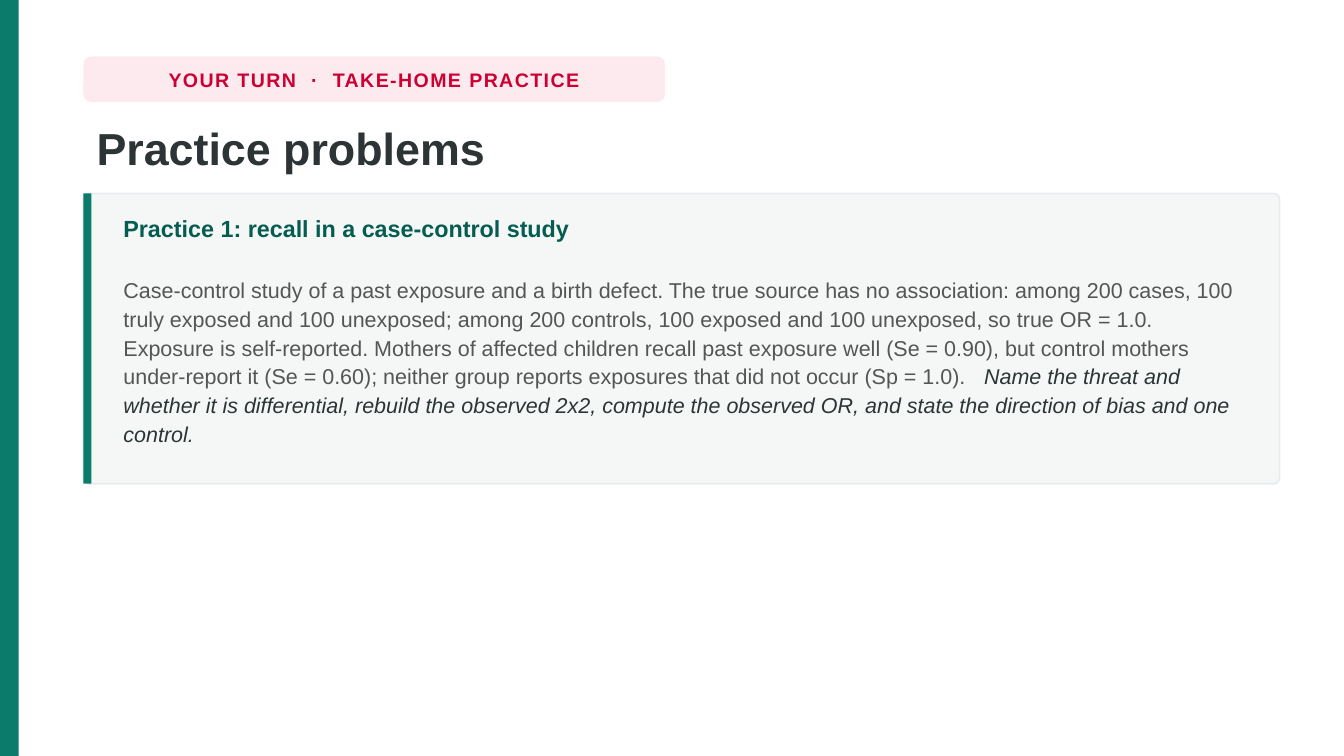
from pptx import Presentation
from pptx.dml.color import RGBColor
from pptx.enum.shapes import MSO_SHAPE as SHAPE
from pptx.enum.text import MSO_ANCHOR as ANCHOR, PP_ALIGN as ALIGN
from pptx.util import Pt

COLORS = {
    "green": "0B7B6B", "dark_green": "065C50", "red": "CC0033",
    "pink": "FDEAEF", "ink": "2D3436", "gray": "555555",
    "panel": "F4F7F6", "border": "E8ECEE",
}
LEFT, WIDTH = 44.64, 640.8
CARD_TOP, CARD_HEIGHT = 103.68, 155.52

prs = Presentation()
prs.slide_width, prs.slide_height = Pt(720), Pt(405)
slide = prs.slides.add_slide(prs.slide_layouts[6])


def add_panel(kind, box, fill, radius=None, border=None):
    panel = slide.shapes.add_shape(kind, *map(Pt, box))
    panel.shadow.inherit = False
    panel.fill.solid()
    panel.fill.fore_color.rgb = RGBColor.from_string(COLORS[fill])
    if radius is not None:
        panel.adjustments[0] = radius
    if border:
        panel.line.color.rgb = RGBColor.from_string(COLORS[border])
        panel.line.width = Pt(1)
    else:
        panel.line.fill.background()


def add_run(paragraph, text, size, color, bold=False, italic=False):
    run = paragraph.add_run()
    run.text = text
    run.font.name = "Arial"
    run.font.size = Pt(size)
    run.font.bold = bold
    run.font.italic = italic
    run.font.color.rgb = RGBColor.from_string(COLORS[color])
    return run


# Side band
add_panel(SHAPE.RECTANGLE, (0, 0, 10, 405), "green")

# Section tag
tag_box = (LEFT, 30.24, 311.76, 24.48)
add_panel(SHAPE.ROUNDED_RECTANGLE, tag_box, "pink", radius=0.18)
tag = slide.shapes.add_textbox(*map(Pt, tag_box)).text_frame
tag.word_wrap = False
tag.vertical_anchor = ANCHOR.MIDDLE
tag.paragraphs[0].alignment = ALIGN.CENTER
tag_run = add_run(tag.paragraphs[0], "YOUR TURN  ·  TAKE-HOME PRACTICE", 10.5, "red", bold=True)
tag_run.font._element.set("spc", "80")

# Title
title = slide.shapes.add_textbox(Pt(LEFT), Pt(60.48), Pt(WIDTH), Pt(40.32)).text_frame
title.word_wrap = True
title.paragraphs[0].line_spacing = 1.02
add_run(title.paragraphs[0], "Practice problems", 24, "ink", bold=True)

# Problem card with accent edge
add_panel(SHAPE.ROUNDED_RECTANGLE, (LEFT, CARD_TOP, WIDTH, CARD_HEIGHT), "panel",
          radius=0.02, border="border")
add_panel(SHAPE.RECTANGLE, (LEFT, CARD_TOP, 4.32, CARD_HEIGHT), "green")

# Problem text
problem = slide.shapes.add_textbox(Pt(59.04), Pt(109.44), Pt(610.56), Pt(144)).text_frame
problem.word_wrap = True
heading = problem.paragraphs[0]
heading.line_spacing = 1.12
add_run(heading, "Practice 1: recall in a case-control study", 12.5, "dark_green", bold=True)

question = problem.add_paragraph()
question.line_spacing = 1.12
question.space_before = Pt(17)
add_run(question,
        "Case-control study of a past exposure and a birth defect. The true source has no "
        "association: among 200 cases, 100 truly exposed and 100 unexposed; among 200 controls, "
        "100 exposed and 100 unexposed, so true OR = 1.0. Exposure is self-reported. Mothers of "
        "affected children recall past exposure well (Se = 0.90), but control mothers "
        "under-report it (Se = 0.60); neither group reports exposures that did not occur "
        "(Sp = 1.0).   ", 11.5, "gray")
add_run(question,
        "Name the threat and whether it is differential, rebuild the observed 2x2, compute the "
        "observed OR, and state the direction of bias and one control.",
        11.5, "ink", italic=True)

prs.save("out.pptx")
